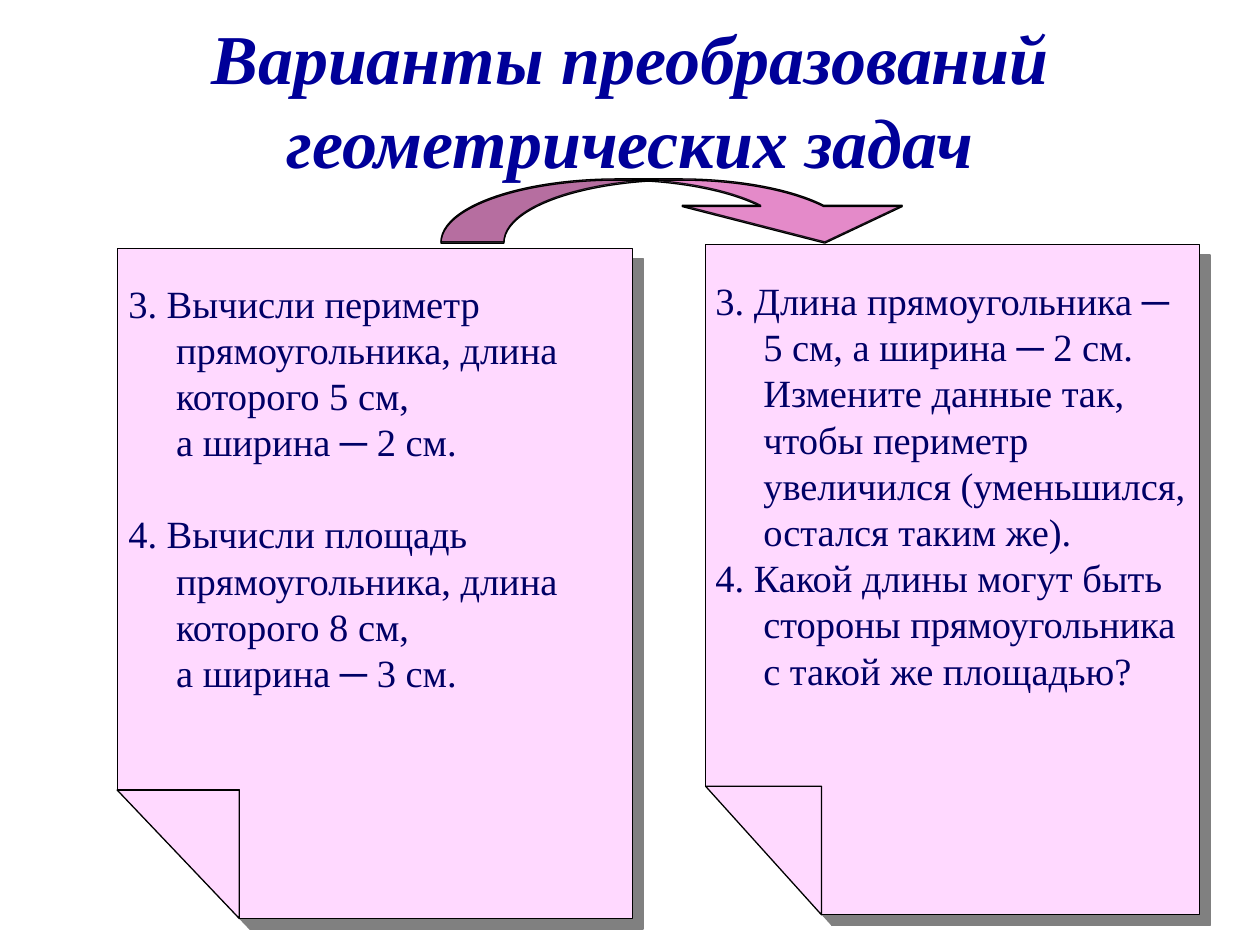
from dataclasses import dataclass

from lxml.etree import SubElement
from pptx import Presentation
from pptx.dml.color import RGBColor as Rgb
from pptx.enum.shapes import MSO_SHAPE as Shape
from pptx.enum.text import MSO_ANCHOR as Anchor, PP_ALIGN as Align
from pptx.oxml.ns import qn
from pptx.util import Inches, Pt

WIDTH, HEIGHT = 10, 7.5


@dataclass(frozen=True)
class Theme:
    """Colours, type sizes and line width of the slide."""
    title: str = "000099"
    body: str = "000066"
    sheet: str = "FFD9FF"
    arrow: str = "E187C3"
    gloss: str = "FFA5FF"
    line: str = "000000"
    shadow: str = "808080"
    face: str = "Times New Roman"
    title_size: int = 40
    body_size: int = 22
    line_width: float = 0.75


@dataclass(frozen=True)
class Task:
    """One paragraph with its hanging indent and the gap above it."""
    text: str
    hanging: float = 0.38
    gap: float = 0


@dataclass(frozen=True)
class Sheet:
    """A folded page with the tasks written on it."""
    left: float
    top: float
    width: float
    fold: float
    text_at: tuple[float, float, float]
    tasks: tuple[Task, ...]
    height: float = 5.32
    fold_height: float = 1.02


THEME = Theme()
SHEETS = (
    Sheet(0.93, 1.97, 4.09, 0.97, (0.92, 2.17, 4.08), (
        Task("3. Вычисли периметр прямоугольника, длина которого 5 см,"),
        Task("а ширина ─ 2 см.", hanging=0),
        Task("4. Вычисли площадь прямоугольника, длина которого 8 см,", gap=1.2),
        Task("а ширина ─ 3 см.", hanging=0),
    )),
    Sheet(5.6, 1.94, 3.92, 0.92, (5.58, 2.15, 4), (
        Task("3. Длина прямоугольника ─ 5 см, а ширина ─ 2 см. Измените данные так, "
             "чтобы периметр увеличился (уменьшился, остался таким же)."),
        Task("4. Какой длины могут быть стороны прямоугольника с такой же площадью?"),
    )),
)


def set_all(target: object, values: dict) -> None:
    """Set every named attribute of the target."""
    for name, value in values.items():
        setattr(target, name, value)


def set_font(font, size: int, colour: str, strong: bool = False) -> None:
    """Give a font the theme face and the wanted look."""
    set_all(font, dict(name=THEME.face, size=Pt(size), bold=strong, italic=strong))
    font.color.rgb = Rgb.from_string(colour)


def paint(shape, colour: str) -> None:
    """Fill and outline a shape."""
    shape.shadow.inherit = False
    shape.fill.solid()
    shape.fill.fore_color.rgb = Rgb.from_string(colour)
    shape.line.color.rgb = Rgb.from_string(THEME.line)
    shape.line.width = Pt(THEME.line_width)


def cast_shadow(shape) -> None:
    """Add a hard shadow to the lower right."""
    effects = shape.element.spPr.find(qn("a:effectLst"))
    shadow = SubElement(effects, qn("a:outerShdw"), dist=str(Pt(8.5)),
                        dir="2700000", algn="ctr", rotWithShape="0")
    SubElement(shadow, qn("a:srgbClr"), val=THEME.shadow)


def draw_title(page, text: str) -> None:
    """Place and format the title."""
    title = page.shapes.title
    set_all(title, dict(left=0, top=Inches(0.09), width=Inches(WIDTH), height=Inches(1.38)))
    set_all(title.text_frame, dict(text=text, word_wrap=True, vertical_anchor=Anchor.MIDDLE))
    para = title.text_frame.paragraphs[0]
    para.alignment = Align.CENTER
    set_font(para.runs[0].font, THEME.title_size, THEME.title, strong=True)


def draw_sheet(page, sheet: Sheet) -> None:
    """Draw a page whose lower left corner is folded."""
    left, top = Inches(sheet.left), Inches(sheet.top)
    right, bottom = left + Inches(sheet.width), top + Inches(sheet.height)
    fold_x, fold_y = left + Inches(sheet.fold), bottom - Inches(sheet.fold_height)
    crease = [(left, fold_y), (fold_x, fold_y), (fold_x, bottom)]
    corners = [(right, bottom), (right, top), (left, top)]
    builder = page.shapes.build_freeform(*crease[0])
    builder.add_line_segments(crease[1:] + corners, close=True)
    builder.move_to(*crease[0])
    builder.add_line_segments(crease[1:], close=True)
    shape = builder.convert_to_shape()
    paint(shape, THEME.sheet)
    cast_shadow(shape)


def draw_arrow(page, top: float, colour: str, opacity: int = 100) -> None:
    """Draw the curved arrow from one sheet to the other."""
    arrow = page.shapes.add_shape(Shape.CURVED_DOWN_ARROW, *map(Inches, (3.5, top, 3.92, 0.5)))
    for index, value in enumerate((1.927, 3.493, 0.58)):
        arrow.adjustments[index] = value
    paint(arrow, colour)
    if opacity < 100:
        tint = arrow.element.spPr.find(qn("a:solidFill"))[0]
        SubElement(tint, qn("a:alpha"), val=str(opacity * 1000))


def write_tasks(page, sheet: Sheet) -> None:
    """Write the tasks of a sheet."""
    box = page.shapes.add_textbox(*map(Inches, (*sheet.text_at, 3.43)))
    box.text_frame.word_wrap = True
    for index, task in enumerate(sheet.tasks):
        paras = box.text_frame.paragraphs
        para = box.text_frame.add_paragraph() if index else paras[0]
        layout = para._p.get_or_add_pPr()
        layout.set("marL", str(Inches(0.38)))
        layout.set("indent", str(-Inches(task.hanging)))
        if task.gap:
            para.space_before = Pt(task.gap * THEME.body_size)
        span = para.add_run()
        span.text = task.text
        set_font(span.font, THEME.body_size, THEME.body)


def main() -> None:
    """Build and save the slide."""
    deck = Presentation()
    set_all(deck, dict(slide_width=Inches(WIDTH), slide_height=Inches(HEIGHT)))
    page = deck.slides.add_slide(deck.slide_layouts[5])
    for sheet in SHEETS:
        draw_sheet(page, sheet)
    draw_arrow(page, 1.42, THEME.arrow)
    draw_title(page, "Варианты преобразований геометрических задач")
    for sheet in SHEETS:
        write_tasks(page, sheet)
    draw_arrow(page, 1.43, THEME.gloss, opacity=10)
    deck.save("out.pptx")


if __name__ == "__main__":
    main()
